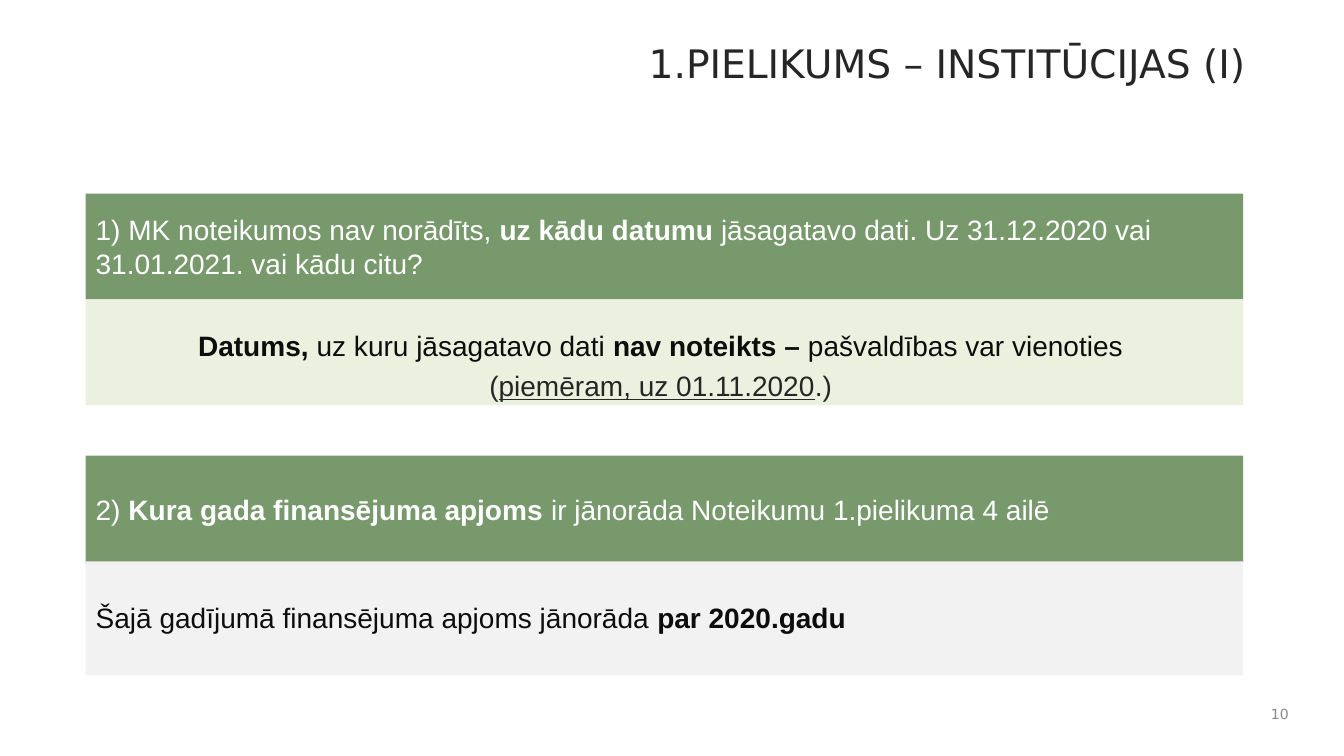
from lxml.etree import SubElement
from pptx import Presentation
from pptx.dml.color import RGBColor
from pptx.enum.shapes import MSO_SHAPE
from pptx.enum.text import MSO_ANCHOR, PP_ALIGN
from pptx.oxml.ns import qn
from pptx.util import Inches, Pt

COLORS = {
    "green": "4A773C", "lime": "EBF1DE", "grey": "F2F2F2", "white": "FFFFFF",
    "ink": "0D0D0D", "dark": "262626", "muted": "898989",
}
BODY, HEADING = "Arial", "DejaVu Sans"
LEFT, WIDTH = 6.38, 86.12  # columns shared by all bands


class Deck:
    """Places elements on a grid of 100 columns and 100 rows."""

    def __init__(self):
        self.prs = Presentation()
        self.prs.slide_width, self.prs.slide_height = Inches(13.33), Inches(7.5)
        self.s = self.prs.slides.add_slide(self.prs.slide_layouts[6])

    def box(self, col, row, cols, rows):
        w, h = self.prs.slide_width / 100, self.prs.slide_height / 100
        return [round(n) for n in (col * w, row * h, cols * w, rows * h)]

    def color(self, name):
        return RGBColor.from_string(COLORS[name])

    def label(self, area, text, size, color, anchor=MSO_ANCHOR.TOP):
        tf = self.s.shapes.add_textbox(*self.box(*area)).text_frame
        tf.word_wrap = True
        tf.vertical_anchor = anchor
        p = tf.paragraphs[0]
        p.text = text
        p.alignment = PP_ALIGN.RIGHT
        p.font.name, p.font.size = HEADING, Pt(size)
        p.font.color.rgb = self.color(color)

    def band(self, row, rows, fill, lines, color, alpha=None, inset=None,
             align=PP_ALIGN.LEFT):
        """Full-width band; an inset in inches sets its text from the top."""
        sp = self.s.shapes.add_shape(
            MSO_SHAPE.RECTANGLE, *self.box(LEFT, row, WIDTH, rows))
        sp.shadow.inherit = False
        sp.line.fill.background()
        sp.fill.solid()
        sp.fill.fore_color.rgb = self.color(fill)
        if alpha:
            clr = sp.fill._xPr.find(qn("a:solidFill"))[0]
            SubElement(clr, qn("a:alpha"), val=str(alpha * 1000))
        tf = sp.text_frame
        tf.word_wrap = True
        tf.vertical_anchor = MSO_ANCHOR.MIDDLE
        p = tf.paragraphs[0]
        p.alignment = align
        if inset:
            tf.vertical_anchor = MSO_ANCHOR.TOP
            tf.margin_top = Inches(inset)
            p.line_spacing = 1.2
        p.font.name, p.font.size = BODY, Pt(20)
        for i, line in enumerate(lines):
            if i:
                p.add_line_break()
            for text, *marks in line:
                r = p.add_run()
                r.text = text
                r.font.name, r.font.size = BODY, Pt(20)
                r.font.bold = "b" in marks
                r.font.underline = "u" in marks
                r.font.color.rgb = self.color("dark" if "dark" in marks else color)

    def question(self, row, rows, line):
        self.band(row, rows, "green", [line], "white", alpha=75)

    def answer(self, row, rows, fill, lines, inset, align=PP_ALIGN.LEFT):
        self.band(row, rows, fill, lines, "ink", inset=inset, align=align)


def main():
    deck = Deck()

    # Title and page number
    deck.label((14.63, 4.53, 78.77, 12), "1.PIELIKUMS – INSTITŪCIJAS (I)", 28, "dark")
    deck.label((93.32, 92.27, 3.3, 4.4), "10", 10, "muted", MSO_ANCHOR.MIDDLE)

    # First question and answer
    deck.question(25.6, 14, [
        ("1) MK noteikumos nav norādīts, ",), ("uz kādu datumu ", "b"),
        ("jāsagatavo dati. Uz 31.12.2020 vai 31.01.2021. vai kādu citu?",)])
    deck.answer(39.6, 14, "lime", [
        [("Datums, ", "b"), ("uz kuru jāsagatavo dati ",),
         ("nav noteikts – ", "b"), ("pašvaldības var vienoties ",)],
        [("(", "dark"), ("piemēram, uz 01.11.2020", "u", "dark"), (".) ", "dark")],
    ], 0.22, PP_ALIGN.CENTER)

    # Second question and answer
    deck.question(60.27, 14.27, [
        ("2) ",), ("Kura gada finansējuma apjoms ", "b"),
        ("ir jānorāda Noteikumu 1.pielikuma 4 ailē",)])
    deck.answer(74.27, 15.07, "grey", [
        [("Šajā gadījumā finansējuma apjoms jānorāda ",), ("par 2020.gadu", "b")],
    ], 0.32)

    deck.prs.save("out.pptx")


if __name__ == "__main__":
    main()
